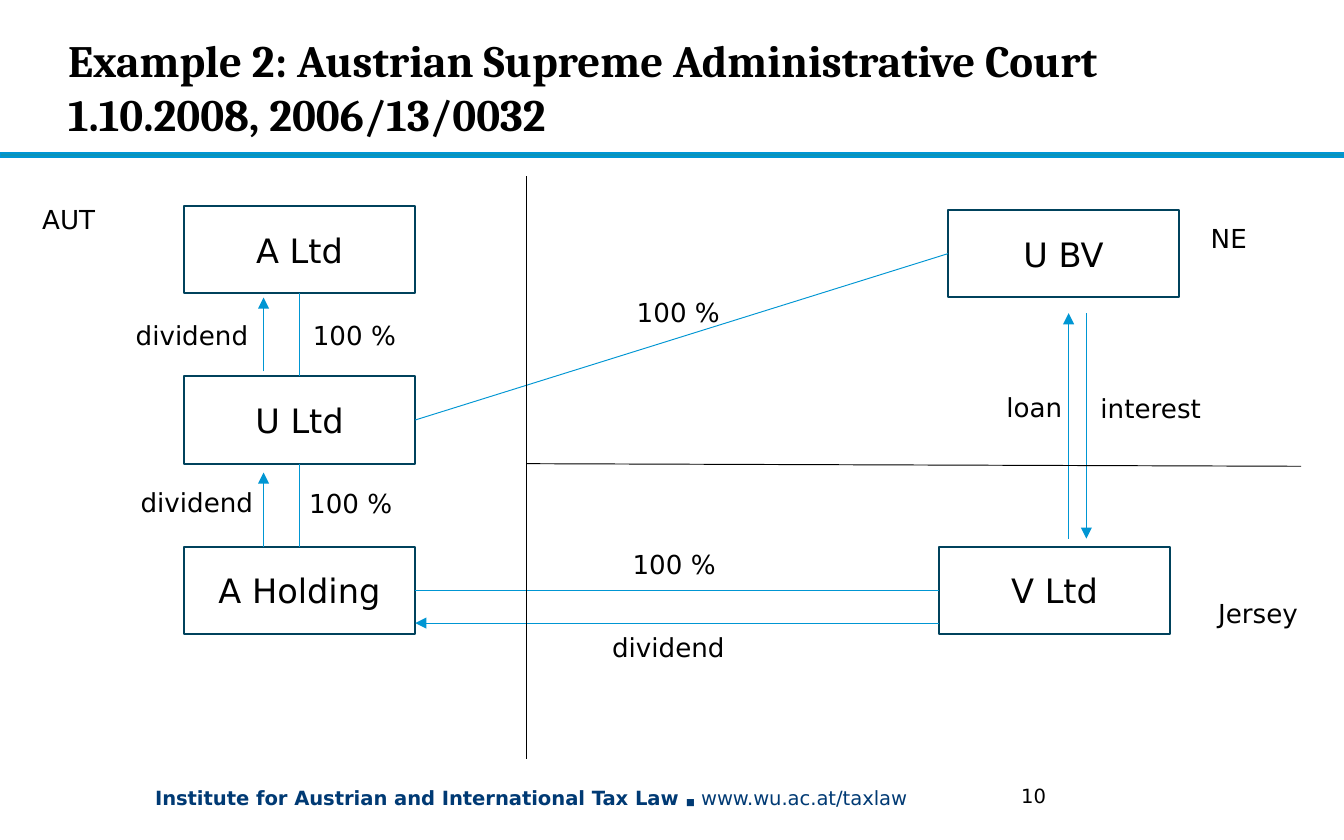
import pptx
import pptx.util
import pptx.dml.color
import pptx.enum.shapes
import pptx.enum.text
import pptx.oxml
import pptx.oxml.ns

Pt = pptx.util.Pt
ANCHOR = pptx.enum.text.MSO_ANCHOR
ALIGN = pptx.enum.text.PP_ALIGN
RECTANGLE = pptx.enum.shapes.MSO_SHAPE.RECTANGLE
STRAIGHT = pptx.enum.shapes.MSO_CONNECTOR.STRAIGHT

COLORS = {"rule": "0C94B7", "flow": "0096D3", "border": "00425C",
          "footer": "003A74", "text": "000000"}
BODY_FONT = "DejaVu Sans"
TITLE = "Example 2: Austrian Supreme Administrative Court 1.10.2008, 2006/13/0032"
FOOTER = [("Institute for Austrian and International Tax Law ", 10.5, True),
          ("■", 5, False), (" www.wu.ac.at/taxlaw", 10.5, False)]
PAGE_NUMBER = [("10", 10.5, False)]

COMPANY_WIDTH, COMPANY_HEIGHT = 124, 46.8
COLUMN_LEFT, COLUMN_TOP, COLUMN_STEP = 98.5, 110.3, 91.3
AUSTRIAN_GROUP = ["A Ltd", "U Ltd", "A Holding"]
COMPANIES = {name: (COLUMN_LEFT, COLUMN_TOP + row * COLUMN_STEP)
             for row, name in enumerate(AUSTRIAN_GROUP)}
COMPANIES["V Ltd"] = (503, COMPANIES["A Holding"][1])
COMPANIES["U BV"] = (507.8, 112.5)

TOP, LEFT, BOTTOM, RIGHT = range(4)
HOLDINGS = [("A Ltd", BOTTOM, "U Ltd", TOP), ("U Ltd", BOTTOM, "A Holding", TOP),
            ("V Ltd", LEFT, "A Holding", RIGHT), ("U BV", LEFT, "U Ltd", RIGHT)]

DIVIDEND_X, LOAN_X, INTEREST_X = 141.2, 572.5, 582
PAYMENTS = [((DIVIDEND_X, 199), (DIVIDEND_X, 159.4)),
            ((DIVIDEND_X, 293), (DIVIDEND_X, 253.2)),
            ((503, 333.8), (222.5, 333.8)),
            ((LOAN_X, 288.6), (LOAN_X, 167.8)),
            ((INTEREST_X, 167.8), (INTEREST_X, 288.6))]
BORDERS = [((282, 94.5), (282, 406.5)), ((697, 249.8), (282, 248.4))]

LABEL_HEIGHT = 24.2
LABEL_WIDTHS = {"dividend": 78.5, "loan": 46, "interest": 69.5}
COUNTRY_OR_SHARE_WIDTH = 62
LABELS = [("AUT", 15.5, 105.4), ("NE", 641.5, 115.4), ("Jersey", 645.5, 316.5),
          ("100 %", 160.5, 167.7), ("100 %", 158.5, 257.4),
          ("100 %", 334, 155), ("100 %", 331.8, 290),
          ("dividend", 65.6, 167.7), ("dividend", 68.2, 257.1),
          ("dividend", 320.8, 334.8),
          ("loan", 532, 206.3), ("interest", 582.5, 206.6)]


def rgb(name):
    return pptx.dml.color.RGBColor.from_string(COLORS[name])


def style(run, size, bold=False, color="text", font=BODY_FONT):
    run.font.name = font
    run.font.size = Pt(size)
    run.font.bold = bold
    run.font.color.rgb = rgb(color)


def add_text(slide, runs, left, top, width, height, color="text"):
    frame = slide.shapes.add_textbox(Pt(left), Pt(top), Pt(width), Pt(height)).text_frame
    frame.word_wrap = True
    for text, size, bold in runs:
        run = frame.paragraphs[0].add_run()
        run.text = text
        style(run, size, bold, color)


def add_rectangle(slide, left, top, width, height, border):
    rectangle = slide.shapes.add_shape(RECTANGLE, Pt(left), Pt(top), Pt(width), Pt(height))
    rectangle.shadow.inherit = False
    rectangle.line.color.rgb = rgb(border)
    rectangle.line.width = Pt(1)
    return rectangle


def add_company(slide, name, left, top):
    company = add_rectangle(slide, left, top, COMPANY_WIDTH, COMPANY_HEIGHT, "border")
    company.fill.background()
    frame = company.text_frame
    frame.text = name
    frame.vertical_anchor = ANCHOR.MIDDLE
    frame.paragraphs[0].alignment = ALIGN.CENTER
    style(frame.paragraphs[0].runs[0], 18)
    return company


def add_line(slide, start=(0, 0), end=(0, 0), color="flow", arrow=False):
    line = slide.shapes.add_connector(STRAIGHT, *map(Pt, start + end))
    line.line.color.rgb = rgb(color)
    line.line.width = Pt(0.5)
    if arrow:
        tail = pptx.oxml.parse_xml(
            f'<a:tailEnd {pptx.oxml.ns.nsdecls("a")} type="triangle"/>')
        line.line._get_or_add_ln().append(tail)
    line._element.spPr.append(
        pptx.oxml.parse_xml(f'<a:effectLst {pptx.oxml.ns.nsdecls("a")}/>'))
    return line


def add_title(slide):
    title = slide.shapes.title
    title.left, title.top, title.width, title.height = map(Pt, (36.5, 10.8, 580.5, 71.3))
    frame = title.text_frame
    frame.text = TITLE
    frame.word_wrap = True
    frame.auto_size = pptx.enum.text.MSO_AUTO_SIZE.NONE
    frame.vertical_anchor = ANCHOR.MIDDLE
    frame.margin_left = frame.margin_right = frame.margin_top = frame.margin_bottom = 0
    frame.paragraphs[0].alignment = ALIGN.LEFT
    style(frame.paragraphs[0].runs[0], 24, True, font="Cambria")


def main():
    presentation = pptx.Presentation()
    presentation.slide_width, presentation.slide_height = Pt(720), Pt(450)
    slide = presentation.slides.add_slide(presentation.slide_layouts[5])
    add_title(slide)
    rule = add_rectangle(slide, 0, 82, 720, 2, "flow")
    rule.fill.solid()
    rule.fill.fore_color.rgb = rgb("rule")
    add_text(slide, FOOTER, 76, 417.6, 454.5, 21, "footer")
    add_text(slide, PAGE_NUMBER, 540, 416.7, 39, 20)

    companies = {name: add_company(slide, name, *place) for name, place in COMPANIES.items()}
    for owner, owner_side, owned, owned_side in HOLDINGS:
        holding = add_line(slide)
        holding.begin_connect(companies[owner], owner_side)
        holding.end_connect(companies[owned], owned_side)
    for start, end in PAYMENTS:
        add_line(slide, start, end, arrow=True)
    for start, end in BORDERS:
        add_line(slide, start, end, "text")
    for text, left, top in LABELS:
        width = LABEL_WIDTHS.get(text, COUNTRY_OR_SHARE_WIDTH)
        add_text(slide, [(text, 14, False)], left, top, width, LABEL_HEIGHT)
    presentation.save("out.pptx")


if __name__ == "__main__":
    main()
